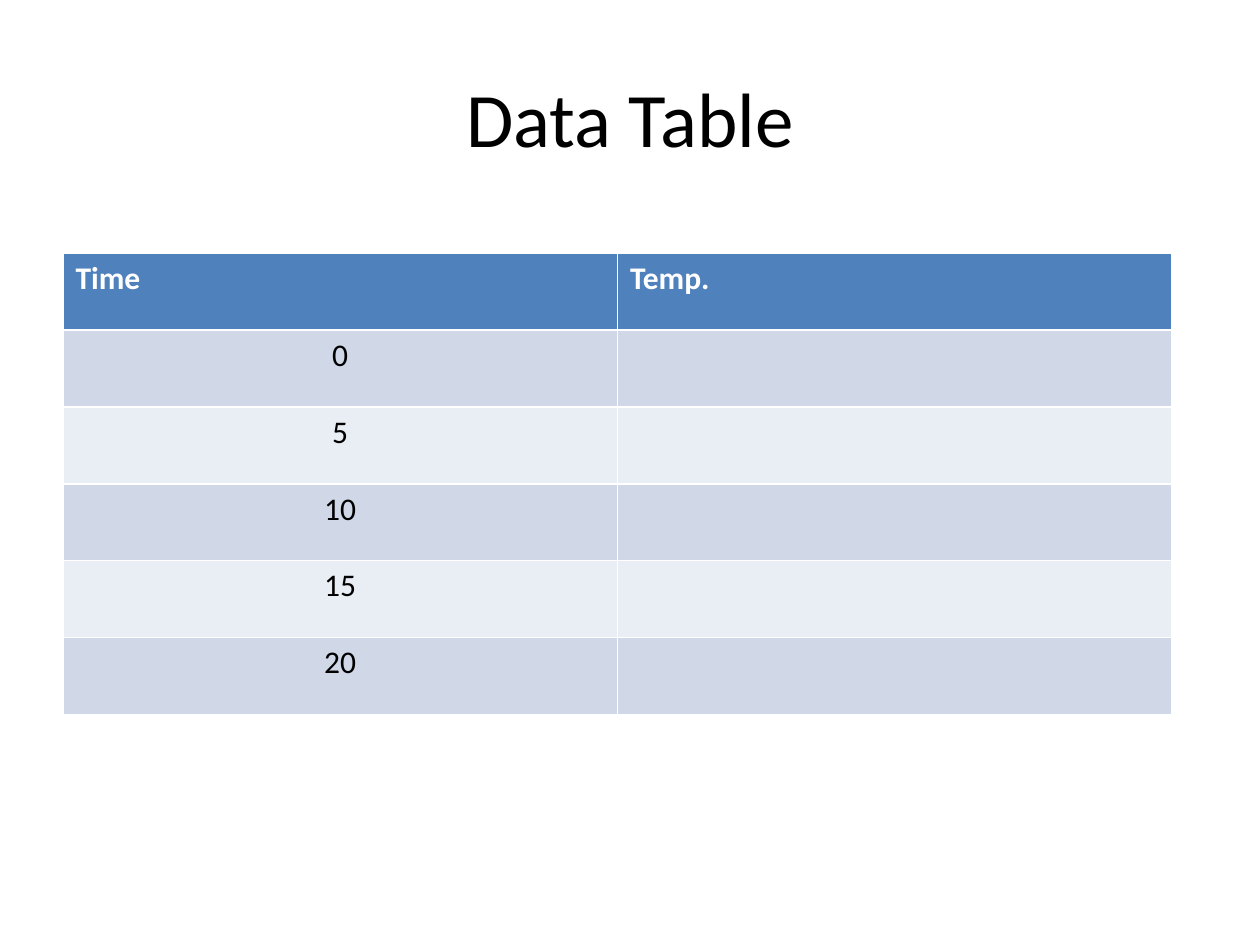
from pptx import Presentation
from pptx.dml.color import RGBColor
from pptx.enum.text import MSO_ANCHOR, PP_ALIGN
from pptx.util import Inches, Pt

LEFT, CENTER = PP_ALIGN.LEFT, PP_ALIGN.CENTER
MIDDLE = MSO_ANCHOR.MIDDLE
TITLE_ONLY = 5
FONT = "Calibri"
COLORS = {
    "text": "000000",
    "header": "4F81BD",
    "header_text": "FFFFFF",
    "band_dark": "D0D8E8",
    "band_light": "E9EDF4",
}
ROWS = [("Time", "Temp."), ("0", ""), ("5", ""), ("10", ""), ("15", ""), ("20", "")]
COL_WIDTH, ROW_HEIGHT = 4.4, 0.61


def write_text(tf, text, size=18, color="text", bold=False, align=CENTER):
    p = tf.paragraphs[0]
    p.alignment = align
    r = p.add_run()
    r.text = text
    r.font.name = FONT
    r.font.size = Pt(size)
    r.font.bold = bold
    r.font.color.rgb = RGBColor.from_string(COLORS[color])


prs = Presentation()
prs.slide_width, prs.slide_height = Inches(10), Inches(7.5)
s = prs.slides.add_slide(prs.slide_layouts[TITLE_ONLY])

title = s.shapes.title
title.left, title.top = Inches(0.5), Inches(0.3)
title.width, title.height = Inches(9), Inches(1.25)
title.text_frame.vertical_anchor = MIDDLE
write_text(title.text_frame, "Data Table", size=44)

# The default table style supplies the white cell borders.
n_cols = len(ROWS[0])
table = s.shapes.add_table(
    len(ROWS), n_cols, Inches(0.5), Inches(2.01),
    Inches(COL_WIDTH * n_cols), Inches(ROW_HEIGHT * len(ROWS)),
).table

for i, row in enumerate(ROWS):
    is_header = i == 0
    fill = "header" if is_header else "band_dark" if i % 2 else "band_light"
    for j, text in enumerate(row):
        cell = table.cell(i, j)
        cell.fill.solid()
        cell.fill.fore_color.rgb = RGBColor.from_string(COLORS[fill])
        if is_header:
            write_text(cell.text_frame, text, color="header_text", bold=True, align=LEFT)
        elif text:
            write_text(cell.text_frame, text)

prs.save("out.pptx")
